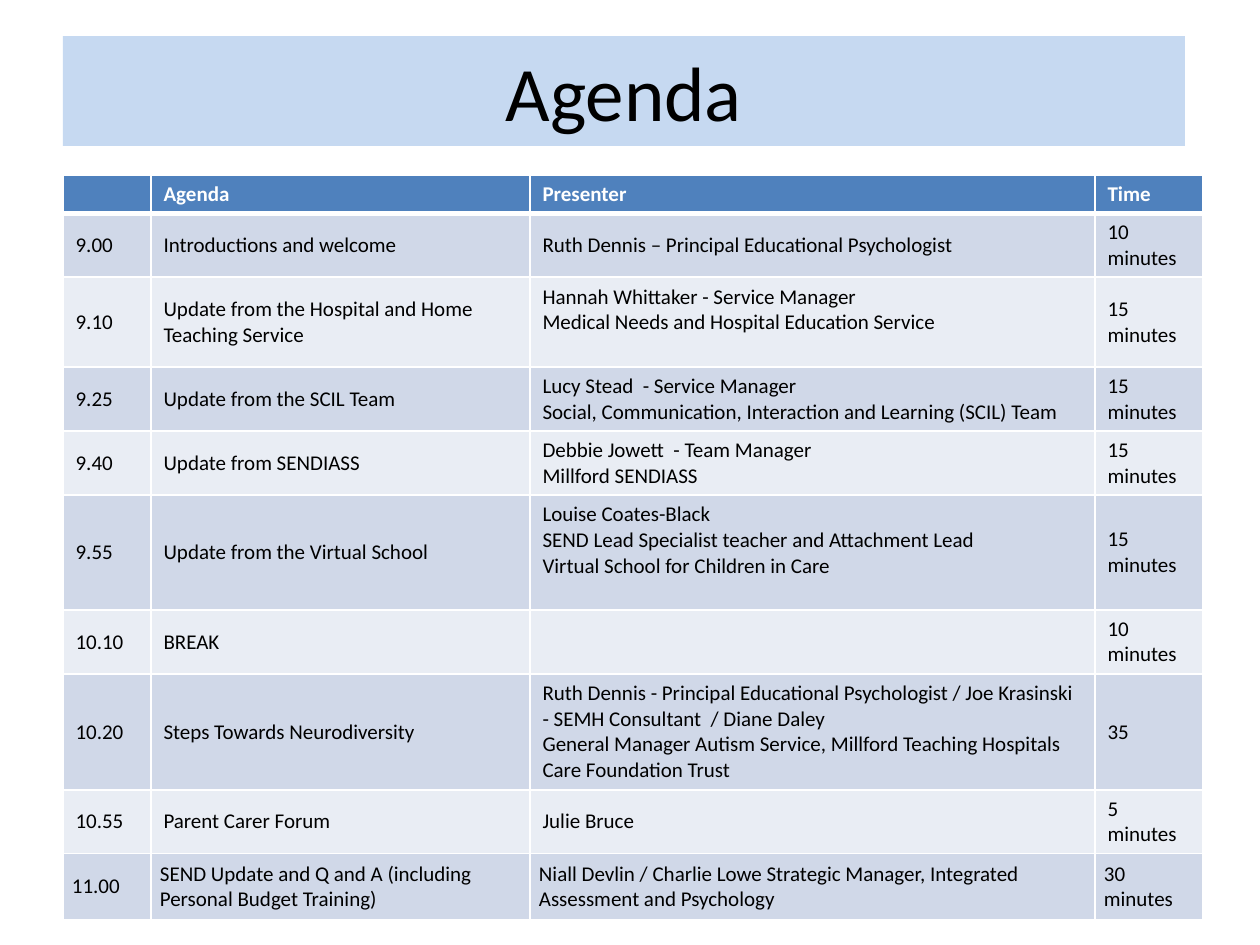
from lxml import etree
from pptx import Presentation
from pptx import util as u
from pptx.dml.color import RGBColor
from pptx.enum import shapes, text
from pptx.oxml.ns import qn

FONT = "Calibri"
WHITE, BLACK = "FFFFFF", "000000"
HEADER_FILL, BANDS = "4F81BD", ("D0D8E8", "E9EDF4")

COLUMNS = [88, 379, 565, 108]
HEIGHTS = [38, 63, 90, 64, 64, 115, 63, 116, 63, 66]
# Cells hold paragraphs split by "\n" and line breaks marked "\v"
ROWS = [
    ("", "Agenda", "Presenter", "Time"),
    ("9.00", "Introductions and welcome",
     "Ruth Dennis – Principal Educational Psychologist", "10 minutes"),
    ("9.10", "Update from the Hospital and Home Teaching Service",
     "Hannah Whittaker - Service Manager\n"
     "Medical Needs and Hospital Education Service", "15 minutes"),
    ("9.25", "Update from the SCIL Team",
     "Lucy Stead  - Service Manager\n"
     "Social, Communication, Interaction and Learning (SCIL) Team", "15 minutes"),
    ("9.40", "Update from SENDIASS",
     "Debbie Jowett  - Team Manager\nMillford SENDIASS", "15 minutes"),
    ("9.55", "Update from the Virtual School",
     "Louise Coates-Black\nSEND Lead Specialist teacher and Attachment Lead\n"
     "Virtual School for Children in Care", "15 minutes"),
    ("10.10", "BREAK", "", "10 minutes"),
    ("10.20", "Steps Towards Neurodiversity",
     "Ruth Dennis - Principal Educational Psychologist / Joe Krasinski  - SEMH "
     "Consultant  / Diane Daley\vGeneral Manager Autism Service, Millford "
     "Teaching Hospitals Care Foundation Trust", "35"),
    ("10.55", "Parent Carer Forum", "Julie Bruce", "5 minutes"),
    ("11.00", "SEND Update and Q and A (including Personal Budget Training)",
     "Niall Devlin / Charlie Lowe Strategic Manager, Integrated Assessment "
     "and Psychology", "30 minutes"),
]
RAISED_ROWS = (2, 5)  # presenter text sits one line higher
LINE = 25


def px(n):
    return u.Emu(round(n * 914400 / 126))


def rgb(value):
    return RGBColor.from_string(value)


def add_run(p, content, size, color, bold=False):
    r = p.add_run()
    r.text = content
    r.font.name = FONT
    r.font.size = u.Pt(size)
    r.font.bold = bold
    r.font.color.rgb = rgb(color)


def add_title(slide, content):
    sp = slide.shapes.add_shape(shapes.MSO_SHAPE.RECTANGLE,
                                px(63), px(36), px(1122), px(110))
    sp.shadow.inherit = False
    sp.fill.solid()
    sp.fill.fore_color.rgb = rgb("C6D9F1")
    sp.line.fill.background()
    tf = sp.text_frame
    tf.word_wrap = True
    tf.vertical_anchor = text.MSO_ANCHOR.MIDDLE
    p = tf.paragraphs[0]
    p.alignment = text.PP_ALIGN.CENTER
    add_run(p, content, 44, BLACK)


def set_borders(cell, widths):
    props = cell._tc.get_or_add_tcPr()
    for side, width in widths.items():
        ln = etree.SubElement(props, qn("a:ln" + side), w=str(u.Pt(width)))
        fill = etree.SubElement(ln, qn("a:solidFill"))
        etree.SubElement(fill, qn("a:srgbClr"), val=WHITE)


def fill_cell(cell, content, fill, color, bold):
    cell.fill.solid()
    cell.fill.fore_color.rgb = rgb(fill)
    cell.vertical_anchor = text.MSO_ANCHOR.MIDDLE
    tf = cell.text_frame
    for i, paragraph in enumerate(content.split("\n")):
        p = tf.add_paragraph() if i else tf.paragraphs[0]
        p.font.size = u.Pt(12)
        for j, line in enumerate(paragraph.split("\v")):
            if j:
                p.add_line_break()
            if line:
                add_run(p, line, 12, color, bold)


def add_agenda(slide):
    table = slide.shapes.add_table(len(ROWS), len(COLUMNS), px(63), px(175),
                                   px(sum(COLUMNS)), px(sum(HEIGHTS))).table
    for column, width in zip(table.columns, COLUMNS):
        column.width = px(width)
    for i, (row, height) in enumerate(zip(ROWS, HEIGHTS)):
        table.rows[i].height = px(height)
        header, last = i == 0, i == len(ROWS) - 1
        for j, content in enumerate(row):
            cell = table.cell(i, j)
            set_borders(cell, {"L": 1, "R": 1, "T": 3 if i == 1 else 1,
                               "B": 3 if header else 1})
            fill_cell(cell, content, HEADER_FILL if header else BANDS[(i - 1) % 2],
                      WHITE if header else BLACK, header)
            if last:
                cell.margin_left = cell.margin_right = px(9)
                cell.margin_top = cell.margin_bottom = 0
        if i in RAISED_ROWS:
            table.cell(i, 2).margin_bottom = px(6 + LINE)


def main():
    prs = Presentation()
    prs.slide_width, prs.slide_height = px(1260), px(945)
    slide = prs.slides.add_slide(prs.slide_layouts[6])
    add_title(slide, "Agenda")
    add_agenda(slide)
    prs.save("out.pptx")


if __name__ == "__main__":
    main()
